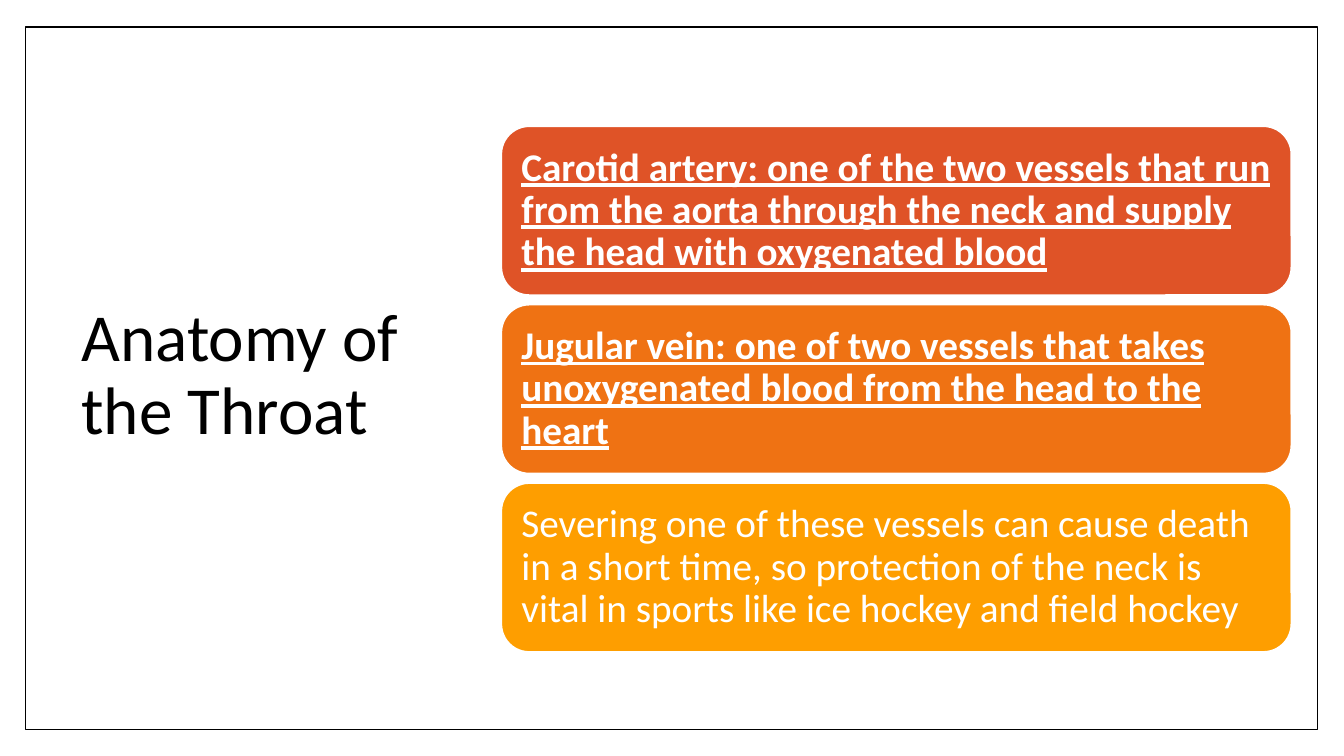
from dataclasses import dataclass

from pptx import Presentation
from pptx.dml.color import RGBColor as RGB
from pptx.enum.shapes import MSO_SHAPE as Shape
from pptx.enum.text import MSO_ANCHOR as Anchor, PP_ALIGN as Align
from pptx.util import Inches, Pt


@dataclass(frozen=True)
class Theme:
    font: str = "Calibri"
    title_size: int = 48
    card_size: int = 28
    ink: str = "000000"
    paper: str = "FFFFFF"
    cards: tuple = ("DF5327", "EF7213", "FE9E00")


THEME = Theme()
WIDTH, HEIGHT = 13.33, 7.5

# Card column: equal rows, each followed by the same gap
CARD_LEFT, CARD_TOP, CARD_WIDTH = 4.97, 1.25, 7.84
CARD_HEIGHT, CARD_GAP = 1.68, 0.09
CARD_INSET = 0.12

# Text and whether it is a highlighted definition
FACTS = [
    ("Carotid artery: one of the two vessels that run from the aorta through "
     "the neck and supply the head with oxygenated blood", True),
    ("Jugular vein: one of two vessels that takes unoxygenated blood from "
     "the head to the heart", True),
    ("Severing one of these vessels can cause death in a short time, so "
     "protection of the neck is vital in sports like ice hockey and "
     "field hockey", False),
]


def set_attrs(obj, values):
    for name, value in values.items():
        setattr(obj, name, value)


def write(sp, text, size, color, inset=0.1, **emphasis):
    """Put one left-aligned, vertically centred paragraph in a shape."""
    tf = sp.text_frame
    set_attrs(tf, {"word_wrap": True, "vertical_anchor": Anchor.MIDDLE})
    set_attrs(tf, {f"margin_{side}": Inches(inset)
                   for side in ("left", "right", "top", "bottom")})
    p = tf.paragraphs[0]
    set_attrs(p, {"alignment": Align.LEFT, "line_spacing": 0.9})
    r = p.add_run()
    r.text = text
    set_attrs(r.font, {"name": THEME.font, "size": Pt(size), **emphasis})
    r.font.color.rgb = RGB.from_string(color)


def add_panel(s, kind, box, fill, line, line_width):
    sp = s.shapes.add_shape(kind, *map(Inches, box))
    sp.shadow.inherit = False
    sp.fill.solid()
    sp.fill.fore_color.rgb = RGB.from_string(fill)
    sp.line.color.rgb = RGB.from_string(line)
    sp.line.width = Pt(line_width)
    return sp


def add_title(s, text, box):
    sp = s.shapes.add_textbox(*map(Inches, box))
    write(sp, text, THEME.title_size, THEME.ink)


def add_card(s, row, text, fill, highlighted):
    top = CARD_TOP + row * (CARD_HEIGHT + CARD_GAP)
    box = (CARD_LEFT, top, CARD_WIDTH, CARD_HEIGHT)
    sp = add_panel(s, Shape.ROUNDED_RECTANGLE, box, fill, THEME.paper, 1.5)
    write(sp, text, THEME.card_size, THEME.paper, CARD_INSET,
          bold=highlighted, underline=highlighted)


def main():
    prs = Presentation()
    set_attrs(prs, {"slide_width": Inches(WIDTH),
                    "slide_height": Inches(HEIGHT)})
    s = prs.slides.add_slide(prs.slide_layouts[6])

    # Frame around the slide
    add_panel(s, Shape.RECTANGLE, (0.25, 0.27, 12.82, 6.97),
              THEME.paper, THEME.ink, 1)

    # Title on the left
    add_title(s, "Anatomy of the Throat", (0.71, 0.67, 3.68, 6.13))

    # Stack of cards on the right
    for row, ((text, highlighted), fill) in enumerate(zip(FACTS, THEME.cards)):
        add_card(s, row, text, fill, highlighted)

    prs.save("out.pptx")


if __name__ == "__main__":
    main()
